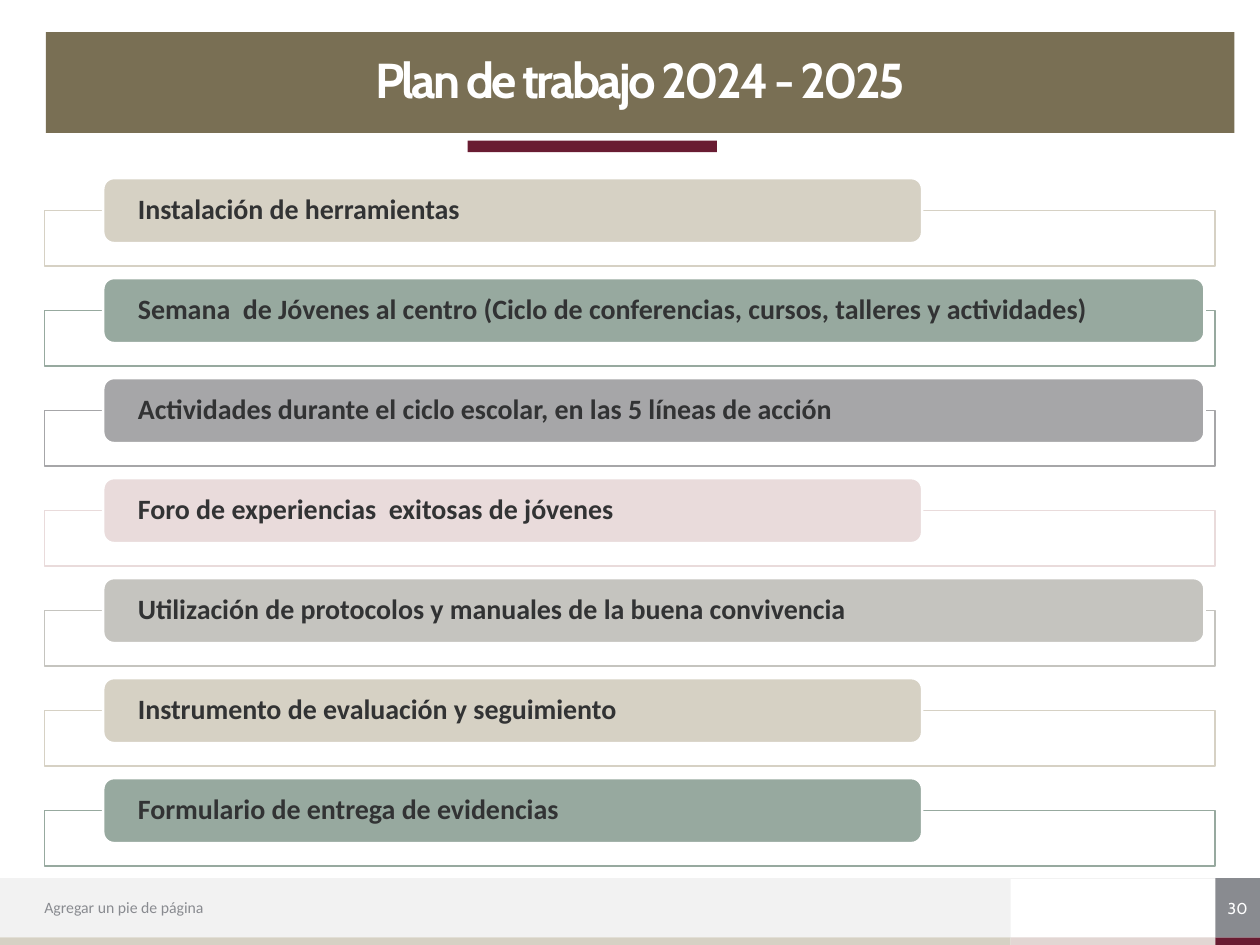
from pptx import Presentation
from pptx.dml.color import RGBColor
from pptx.enum import shapes, text
from pptx.oxml.ns import qn
from pptx.util import Pt
from lxml import etree

WHITE = RGBColor(0xFF, 0xFF, 0xFF)
INK = RGBColor(0x32, 0x33, 0x34)
OLIVE = RGBColor(0x79, 0x6F, 0x54)
WINE = RGBColor(0x69, 0x1C, 0x32)
SLATE = RGBColor(0x89, 0x8B, 0x90)
PALE = RGBColor(0xF2, 0xF2, 0xF2)
BLUSH = RGBColor(0xE2, 0xD6, 0xD3)
SAND = RGBColor(0xD6, 0xD1, 0xC4)
SAGE = RGBColor(0x97, 0xA9, 0x9F)
GREY = RGBColor(0xA6, 0xA6, 0xA8)
ROSE = RGBColor(0xE9, 0xDB, 0xDB)
STONE = RGBColor(0xC5, 0xC4, 0xBF)

TITLE = "Plan de trabajo 2024 - 2025"
FOOTER = "Agregar un pie de página"
PAGE_NUMBER = "30"

SHORT, LONG = 468, 629.3  # tab widths
ACTIVITIES = [
    ("Instalación de herramientas", SAND, SHORT),
    ("Semana  de Jóvenes al centro (Ciclo de conferencias, cursos, talleres y actividades)", SAGE, LONG),
    ("Actividades durante el ciclo escolar, en las 5 líneas de acción", GREY, LONG),
    ("Foro de experiencias  exitosas de jóvenes", ROSE, SHORT),
    ("Utilización de protocolos y manuales de la buena convivencia", STONE, LONG),
    ("Instrumento de evaluación y seguimiento", SAND, SHORT),
    ("Formulario de entrega de evidencias", SAGE, SHORT),
]

WIDTH, HEIGHT = 720, 540
LEFT = 25.4
FRAME_WIDTH, FRAME_HEIGHT = 669, 31.75
TAB_LEFT, TAB_HEIGHT = 59, 37.2
FIRST_TAB_TOP, ROW_STEP = 101.75, 57.15
TAB_TO_FRAME = 18.5
FOOTER_TOP, STRIP_TOP = 501.8, 535.7
FOOTER_SPLIT, NUMBER_LEFT = 577.6, 694.5

RECT = shapes.MSO_SHAPE.RECTANGLE
ROUNDED = shapes.MSO_SHAPE.ROUNDED_RECTANGLE
CENTER, START = text.PP_ALIGN.CENTER, text.PP_ALIGN.LEFT


def add_block(page, left, top, width, height, fill, line=None, line_width=1, kind=RECT):
    shape = page.shapes.add_shape(kind, Pt(left), Pt(top), Pt(width), Pt(height))
    shape.shadow.inherit = False
    shape.fill.solid()
    shape.fill.fore_color.rgb = fill
    if line is None:
        shape.line.fill.background()
    else:
        shape.line.color.rgb = line
        shape.line.width = Pt(line_width)
    return shape


def write(shape, words, size, font, color, align=START, bold=False, inset=0, spacing=1.0):
    """Put one vertically centred line of text in the shape and return its run."""
    frame = shape.text_frame
    frame.word_wrap = True
    frame.vertical_anchor = text.MSO_ANCHOR.MIDDLE
    frame.margin_left = frame.margin_right = Pt(inset)
    frame.margin_top = frame.margin_bottom = 0
    para = frame.paragraphs[0]
    para.text = words
    para.alignment = align
    para.line_spacing = spacing
    span = para.runs[0]
    span.font.size = Pt(size)
    span.font.name = font
    span.font.bold = bold
    span.font.color.rgb = color
    return span


def add_footer(page):
    strip_height = HEIGHT - STRIP_TOP
    band_height = STRIP_TOP - FOOTER_TOP
    add_block(page, 0, FOOTER_TOP, FOOTER_SPLIT, band_height, PALE)
    edges = [0, FOOTER_SPLIT, NUMBER_LEFT, WIDTH]
    for start, end, color in zip(edges, edges[1:], (SAND, BLUSH, WINE)):
        add_block(page, start, STRIP_TOP, end - start, strip_height, color)

    rule = page.shapes.add_connector(
        shapes.MSO_CONNECTOR.STRAIGHT, 0, Pt(FOOTER_TOP), Pt(WIDTH), Pt(FOOTER_TOP))
    rule.line.color.rgb = PALE
    rule.line.width = Pt(0.5)
    etree.SubElement(rule._element.spPr, qn("a:effectLst"))

    label = page.shapes.add_textbox(Pt(LEFT), Pt(507), Pt(335), Pt(23))
    write(label, FOOTER, 9, "Calibri", SLATE)
    number = add_block(page, NUMBER_LEFT, FOOTER_TOP, WIDTH - NUMBER_LEFT, band_height, SLATE)
    write(number, PAGE_NUMBER, 9, "Cabin", WHITE, CENTER)


def add_title(page):
    banner = add_block(page, 26.2, 18.4, 679.2, 57.6, OLIVE)
    span = write(banner, TITLE, 28, "Cabin", WHITE, CENTER, bold=True, spacing=0.9)
    span.font._element.set("spc", "-150")
    add_block(page, 267.3, 80.4, 142.4, 6.6, WINE)


def add_activities(page):
    for row, (words, color, width) in enumerate(ACTIVITIES):
        top = FIRST_TAB_TOP + row * ROW_STEP
        add_block(page, LEFT, top + TAB_TO_FRAME, FRAME_WIDTH, FRAME_HEIGHT, WHITE, color)
        tab = add_block(page, TAB_LEFT, top, width, TAB_HEIGHT, color, WHITE, 1.5, ROUNDED)
        write(tab, words, 16, "Calibri", INK, bold=True, inset=18, spacing=0.9)


def main():
    deck = Presentation()
    deck.slide_width, deck.slide_height = Pt(WIDTH), Pt(HEIGHT)
    page = deck.slides.add_slide(deck.slide_layouts[6])
    add_footer(page)
    add_title(page)
    add_activities(page)
    deck.save("out.pptx")


if __name__ == "__main__":
    main()
